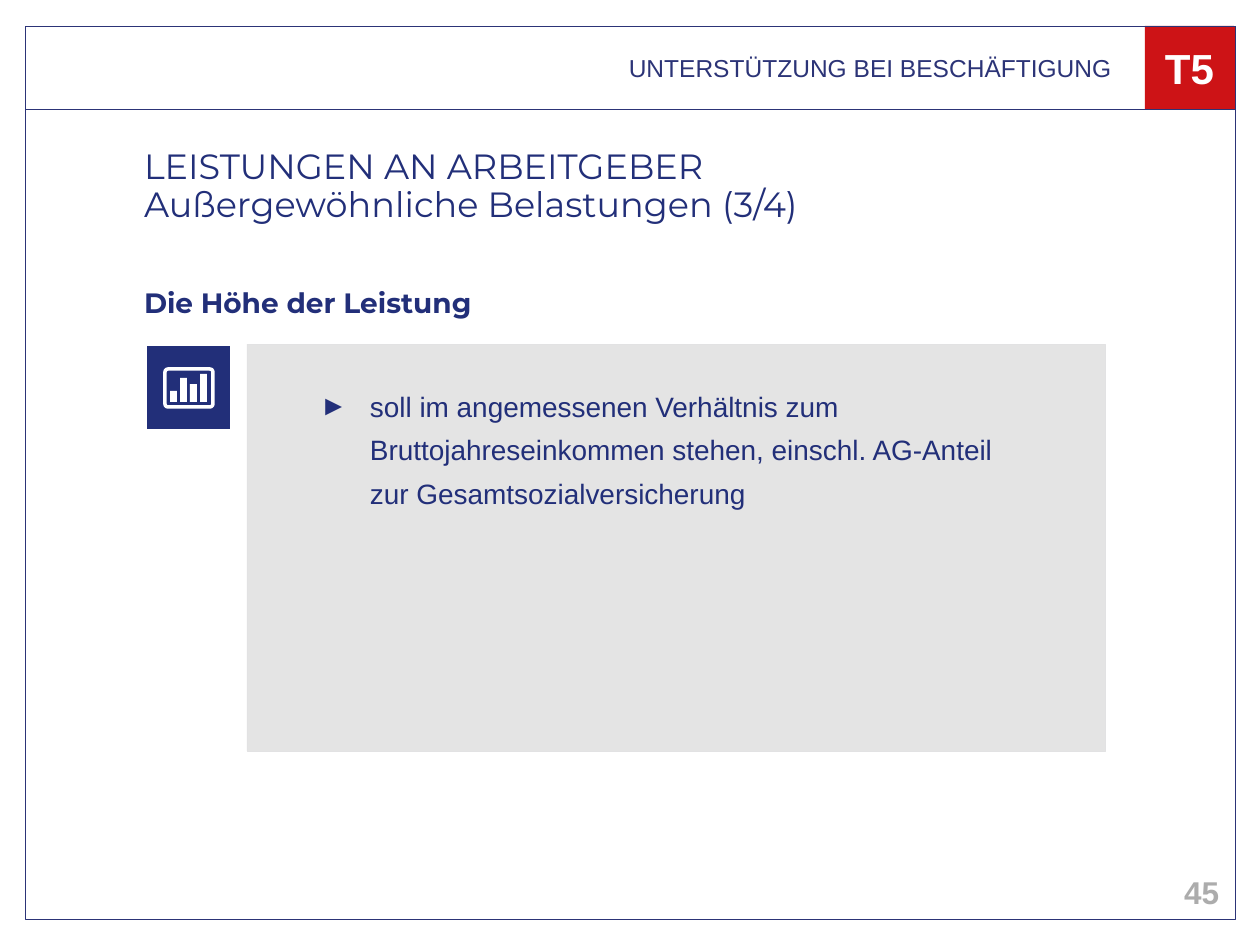
from dataclasses import dataclass
from typing import Optional

from lxml import etree
from pptx import Presentation
from pptx import util as u
from pptx.dml.color import RGBColor
from pptx.enum import shapes, text
from pptx.oxml.ns import qn

PX_PER_INCH = 126
NAVY, FRAME_BLUE, RED, WHITE = "222F79", "2C3477", "CD1316", "FFFFFF"
LEFT, CENTER, RIGHT = text.PP_ALIGN.LEFT, text.PP_ALIGN.CENTER, text.PP_ALIGN.RIGHT
TOP, MIDDLE = text.MSO_ANCHOR.TOP, text.MSO_ANCHOR.MIDDLE


@dataclass
class Area:
    left: int
    top: int
    width: int
    height: int


@dataclass
class Panel:
    area: Area
    fill: Optional[str] = None
    line: Optional[str] = None
    line_pt: float = 0.25
    kind: shapes.MSO_SHAPE = shapes.MSO_SHAPE.RECTANGLE


@dataclass
class Caption:
    area: Area
    lines: list[str]
    size: int
    color: str = NAVY
    font: str = "Arial"
    bold: bool = False
    align: text.PP_ALIGN = LEFT
    anchor: text.MSO_ANCHOR = TOP
    spacing: float = 1.0
    right_inset: int = 0
    bullet: Optional[str] = None


def px(value: int) -> int:
    return round(value * u.Inches(1) / PX_PER_INCH)


def rgb(color: str) -> RGBColor:
    return RGBColor.from_string(color)


def bounds(area: Area) -> tuple[int, int, int, int]:
    return px(area.left), px(area.top), px(area.width), px(area.height)


def add_panel(page, panel: Panel):
    shape = page.shapes.add_shape(panel.kind, *bounds(panel.area))
    shape.shadow.inherit = False
    if panel.fill:
        shape.fill.solid()
        shape.fill.fore_color.rgb = rgb(panel.fill)
    else:
        shape.fill.background()
    if panel.line:
        shape.line.color.rgb = rgb(panel.line)
        shape.line.width = u.Pt(panel.line_pt)
    else:
        shape.line.fill.background()
    return shape


def add_bullet(para, symbol: str, color: str, indent: int) -> None:
    props = para._p.get_or_add_pPr()
    props.set("marL", str(px(indent)))
    props.set("indent", str(-px(indent)))
    bullet_color = etree.SubElement(props, qn("a:buClr"))
    etree.SubElement(bullet_color, qn("a:srgbClr"), val=color)
    etree.SubElement(props, qn("a:buFont"), typeface="Arial")
    etree.SubElement(props, qn("a:buChar"), char=symbol)


def write_caption(box, caption: Caption) -> None:
    box.left, box.top, box.width, box.height = bounds(caption.area)
    frame = box.text_frame
    frame.word_wrap = True
    frame.auto_size = text.MSO_AUTO_SIZE.NONE
    frame.vertical_anchor = caption.anchor
    frame.margin_left = frame.margin_top = frame.margin_bottom = 0
    frame.margin_right = px(caption.right_inset)
    para = frame.paragraphs[0]
    para.alignment = caption.align
    para.line_spacing = caption.spacing
    para.space_before = u.Pt(0)
    if caption.bullet:
        add_bullet(para, caption.bullet, caption.color, 50)
    for number, line in enumerate(caption.lines):
        if number:
            para.add_line_break()
        span = para.add_run()
        span.text = line
        span.font.name = caption.font
        span.font.size = u.Pt(caption.size)
        span.font.bold = caption.bold
        span.font.color.rgb = rgb(caption.color)


def add_chart_icon(page) -> None:
    add_panel(page, Panel(Area(144, 343, 89, 89), NAVY, WHITE, 3))
    screen = add_panel(page, Panel(Area(165, 369, 48, 38), None, WHITE, 2,
                                   shapes.MSO_SHAPE.ROUNDED_RECTANGLE))
    screen.adjustments[0] = 0.08
    base, first, step, width = 402, 170, 10, 7
    for index, height in enumerate((11, 24, 18, 28)):
        add_panel(page, Panel(Area(first + index * step, base - height, width, height), WHITE))


TITLE = Caption(Area(144, 149, 961, 83),
                ["LEISTUNGEN AN ARBEITGEBER", "Außergewöhnliche Belastungen (3/4)"],
                20, font="Montserrat", spacing=0.9)
BADGE = Area(1145, 26, 89, 83)
PANELS = [
    Panel(BADGE, RED, RED),
    Panel(Area(25, 26, 1210, 83), line=FRAME_BLUE),
    Panel(Area(25, 26, 1210, 893), line=FRAME_BLUE),
    Panel(Area(247, 344, 858, 407), "E4E4E4", "E2E2E3"),
]
CAPTIONS = [
    Caption(Area(320, 379, 706, 348),
            ["soll im angemessenen Verhältnis zum Bruttojahreseinkommen stehen, "
             "einschl. AG-Anteil zur Gesamtsozialversicherung"],
            16, spacing=1.3, bullet="►"),
    Caption(Area(949, 867, 283, 50), ["45"], 18, "ACACAC", bold=True,
            align=RIGHT, anchor=MIDDLE, right_inset=13),
    Caption(Area(25, 26, 1120, 83), ["UNTERSTÜTZUNG BEI BESCHÄFTIGUNG"], 14, FRAME_BLUE,
            align=RIGHT, anchor=MIDDLE, right_inset=33),
    Caption(Area(144, 275, 963, 69), ["Die Höhe der Leistung"], 16,
            font="Montserrat", bold=True, spacing=1.3),
    Caption(BADGE, ["T5"], 24, WHITE, bold=True, align=CENTER, anchor=MIDDLE),
]


def main() -> None:
    deck = Presentation()
    deck.slide_width, deck.slide_height = u.Inches(10), u.Inches(7.5)
    page = deck.slides.add_slide(deck.slide_layouts[5])

    # Frame, header and content panel
    for panel in PANELS:
        add_panel(page, panel)
    add_chart_icon(page)

    # Title and texts
    write_caption(page.shapes.title, TITLE)
    for caption in CAPTIONS:
        write_caption(page.shapes.add_textbox(*bounds(caption.area)), caption)

    deck.save("out.pptx")


if __name__ == "__main__":
    main()
